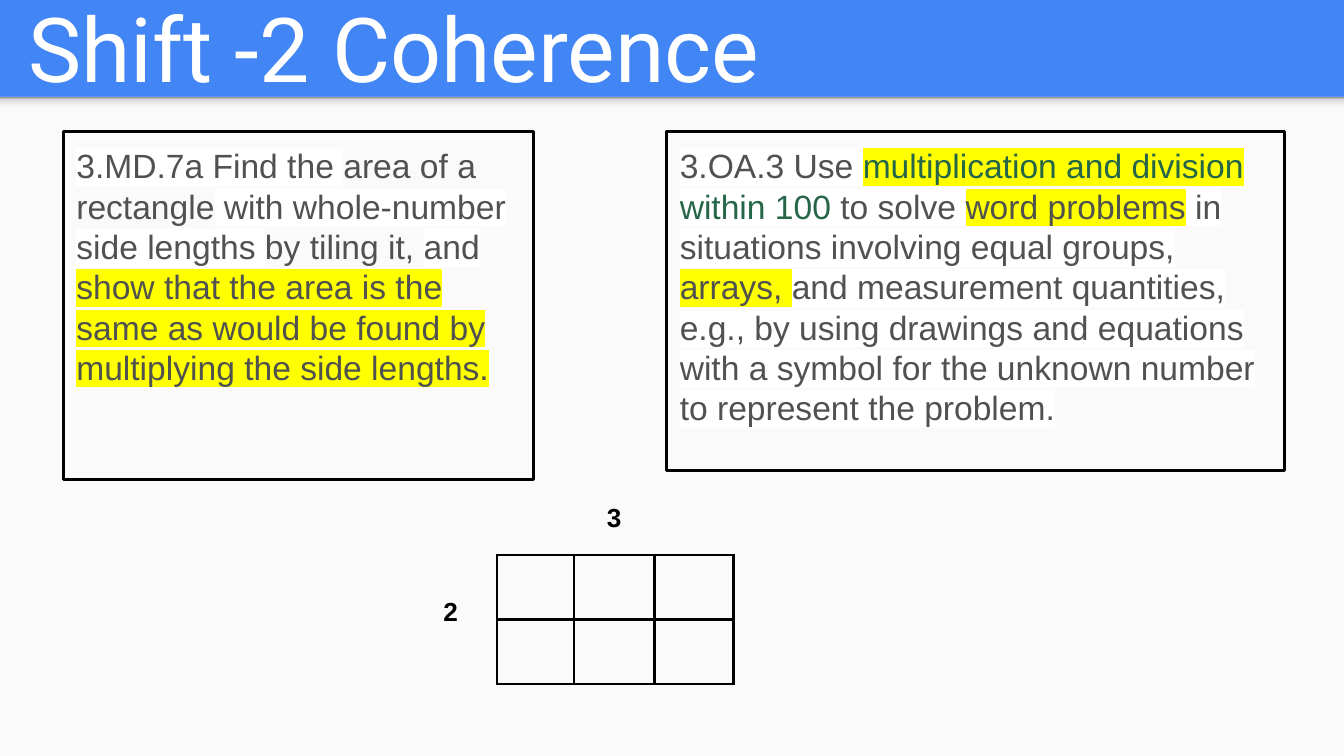
import pptx
import pptx.dml.color
import pptx.enum.shapes
import pptx.enum.text
import pptx.oxml
import pptx.oxml.ns
import pptx.util
from pptx.util import Inches

THEME = {
    "blue": "4285F4", "paper": "FAFAFA", "white": "FFFFFF", "black": "000000",
    "grey": "50524F", "green": "266648", "yellow": "FFFF00",
    "title_font": "Roboto", "body_font": "Arial",
    "title_size": 48, "body_size": 18, "label_size": 14, "line": 1.5,
}
PAGE_WIDTH = 10
PAGE_HEIGHT = PAGE_WIDTH * 9 / 16
HEADER_HEIGHT = 0.72

# Content: each run is text, colour, highlight
TITLE = "Shift -2 Coherence"
STANDARDS = [
    ((0.47, 0.98, 3.5, 2.59), [
        ("3.MD.7a Find the ", "grey", "white"),
        ("area of a rectangle", "grey", None),
        (" with whole-number side lengths ", "grey", "white"),
        ("by tiling it, ", "grey", None),
        ("and ", "grey", "white"),
        ("show that the area is the same as would be found by "
         "multiplying the side lengths.", "grey", "yellow"),
    ]),
    ((4.96, 0.98, 4.6, 2.52), [
        ("3.OA.3 Use ", "grey", "white"),
        ("multiplication and division", "green", "yellow"),
        (" within 100", "green", "white"),
        (" to solve ", "grey", "white"),
        ("word problems", "grey", "yellow"),
        (" in situations involving equal groups, ", "grey", "white"),
        ("arrays, ", "grey", "yellow"),
        ("and measurement quantities, e.g., by using drawings and equations with "
         "a symbol for the unknown number to represent the problem.", "grey", "white"),
    ]),
]
SHADOW_STOPS = [(0, "F9F9F9"), (36, "F9F9F9"), (80, "DEDEDE"), (100, "999999")]
ARRAY_AT = (3.06, 3.65)
ARRAY_COLUMNS = [0.64, 0.57, 0.6, 0.59]
ARRAY_ROWS = [0.48, 0.48, 0.48]
ARRAY_LABELS = {(0, 2): ("3", 0.1), (1, 0): ("2 ", 0.32)}  # text, top inset


def color(name):
    return pptx.dml.color.RGBColor.from_string(THEME[name])


def element(xml):
    return pptx.oxml.parse_xml(xml.replace(">", " " + pptx.oxml.ns.nsdecls("a") + ">", 1))


def add_run(para, text, font, size, ink, highlight=None, bold=False):
    span = para.add_run()
    span.text = text
    span.font.name = font
    span.font.size = pptx.util.Pt(size)
    span.font.bold = bold
    span.font.color.rgb = color(ink)
    if highlight:
        mark = element(f'<a:highlight><a:srgbClr val="{THEME[highlight]}"/></a:highlight>')
        span.font._element.find(pptx.oxml.ns.qn("a:solidFill")).addnext(mark)


def set_insets(holder, top=0.1):
    holder.margin_left = holder.margin_right = holder.margin_bottom = Inches(0.1)
    holder.margin_top = Inches(top)


def add_box(page, place):
    box = page.shapes.add_shape(pptx.enum.shapes.MSO_SHAPE.RECTANGLE, *map(Inches, place))
    box.shadow.inherit = False
    box.line.fill.background()
    return box


def add_standard(page, place, runs):
    box = add_box(page, place)
    box.fill.background()
    box.line.color.rgb = color("black")
    box.line.width = pptx.util.Pt(THEME["line"])
    frame = box.text_frame
    frame.word_wrap = True
    frame.vertical_anchor = pptx.enum.text.MSO_ANCHOR.TOP
    set_insets(frame)
    para = frame.paragraphs[0]
    para.alignment = pptx.enum.text.PP_ALIGN.LEFT
    for text, ink, highlight in runs:
        add_run(para, text, THEME["body_font"], THEME["body_size"], ink, highlight)


def in_grid(row, column):
    return 1 <= row < len(ARRAY_ROWS) and 1 <= column < len(ARRAY_COLUMNS)


def set_borders(cell, row, column):
    """Rule every side that touches a square of the array."""
    sides = {"L": (0, -1), "R": (0, 1), "T": (-1, 0), "B": (1, 0)}
    properties = cell._tc.get_or_add_tcPr()
    for side, (down, across) in sides.items():
        ruled = in_grid(row, column) or in_grid(row + down, column + across)
        paint = (f'<a:solidFill><a:srgbClr val="{THEME["black"]}"/></a:solidFill>'
                 if ruled else "<a:noFill/>")
        width = pptx.util.Pt(THEME["line"])
        properties.append(element(f'<a:ln{side} w="{width}">{paint}</a:ln{side}>'))


def add_array(page):
    size = (sum(ARRAY_COLUMNS), sum(ARRAY_ROWS))
    table = page.shapes.add_table(len(ARRAY_ROWS), len(ARRAY_COLUMNS),
                                  *map(Inches, ARRAY_AT + size)).table
    table.first_row = table.horz_banding = False
    for column, width in enumerate(ARRAY_COLUMNS):
        table.columns[column].width = Inches(width)
    for row, height in enumerate(ARRAY_ROWS):
        table.rows[row].height = Inches(height)
        for column in range(len(ARRAY_COLUMNS)):
            cell = table.cell(row, column)
            set_borders(cell, row, column)
            cell.fill.background()
    table.cell(1, 0).merge(table.cell(2, 0))
    for (row, column), (text, top) in ARRAY_LABELS.items():
        cell = table.cell(row, column)
        set_insets(cell, top)
        para = cell.text_frame.paragraphs[0]
        para.alignment = pptx.enum.text.PP_ALIGN.CENTER
        add_run(para, text, THEME["body_font"], THEME["label_size"], "black", bold=True)


def main():
    deck = pptx.Presentation()
    deck.slide_width, deck.slide_height = Inches(PAGE_WIDTH), Inches(PAGE_HEIGHT)
    page = deck.slides.add_slide(deck.slide_layouts[5])

    # Blue header behind a pale body
    page.background.fill.solid()
    page.background.fill.fore_color.rgb = color("blue")
    body = add_box(page, (0, HEADER_HEIGHT, PAGE_WIDTH, PAGE_HEIGHT - HEADER_HEIGHT))
    body.fill.solid()
    body.fill.fore_color.rgb = color("paper")

    # Header shadow, dark at the top
    shade = add_box(page, (0, HEADER_HEIGHT, PAGE_WIDTH, 0.12))
    shade.fill.gradient()
    shade.fill.gradient_angle = 90
    stops = shade._element.spPr.find(".//" + pptx.oxml.ns.qn("a:gsLst"))
    for stop in list(stops):
        stops.remove(stop)
    for percent, tone in SHADOW_STOPS:
        stops.append(element(f'<a:gs pos="{percent * 1000}"><a:srgbClr val="{tone}"/></a:gs>'))

    # Title
    title = page.shapes.title
    title.left, title.top, title.width, title.height = map(Inches, (0.11, 0.02, 9.65, 0.66))
    frame = title.text_frame
    frame.auto_size = pptx.enum.text.MSO_AUTO_SIZE.NONE
    frame.vertical_anchor = pptx.enum.text.MSO_ANCHOR.MIDDLE
    set_insets(frame)
    frame.paragraphs[0].alignment = pptx.enum.text.PP_ALIGN.LEFT
    add_run(frame.paragraphs[0], TITLE, THEME["title_font"], THEME["title_size"], "white")

    # Standards and the 2 by 3 array
    for place, runs in STANDARDS:
        add_standard(page, place, runs)
    add_array(page)

    deck.save("out.pptx")


if __name__ == "__main__":
    main()
